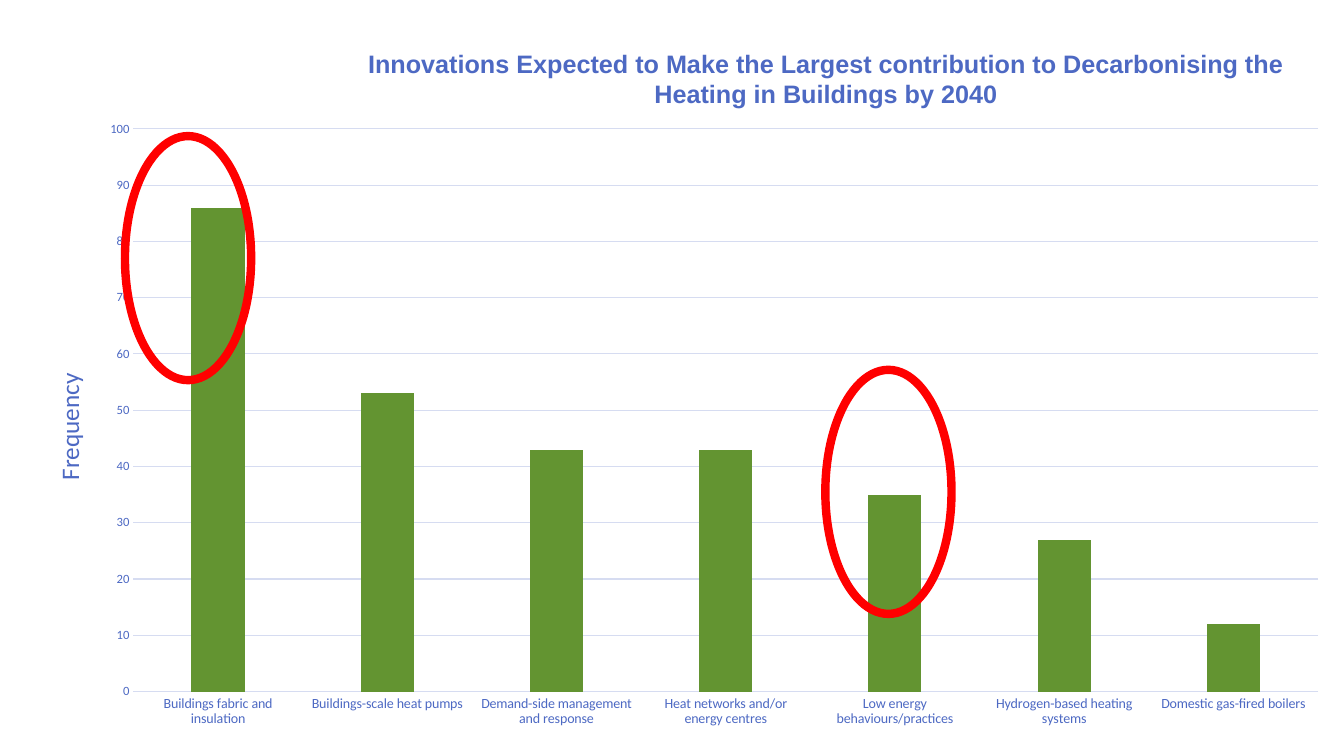
from lxml.etree import SubElement
from pptx import Presentation
from pptx.chart.data import CategoryChartData
from pptx.dml.color import RGBColor
from pptx.enum.chart import XL_CHART_TYPE, XL_TICK_MARK
from pptx.enum.shapes import MSO_SHAPE
from pptx.enum.text import PP_ALIGN
from pptx.oxml.ns import qn
from pptx.util import Cm, Pt

BLUE = "4D69C3"
PALE_BLUE = "D6DCF1"
GREEN = "639431"
RED = "FF0000"

FREQUENCIES = {
    "Buildings fabric and insulation": 86,
    "Buildings-scale heat pumps": 53,
    "Demand-side management and response": 43,
    "Heat networks and/or energy centres": 43,
    "Low energy behaviours/practices": 35,
    "Hydrogen-based heating systems": 27,
    "Domestic gas-fired boilers": 12,
}


def color(hex_code):
    return RGBColor.from_string(hex_code)


def style_font(font, size, hex_code=BLUE, name="Calibri", bold=False):
    font.size = Pt(size)
    font.name = name
    font.bold = bold
    font.color.rgb = color(hex_code)


def style_line(line, hex_code, width):
    line.color.rgb = color(hex_code)
    line.width = Pt(width)


def write_text(frame, text, align=PP_ALIGN.CENTER, **font_format):
    paragraph = frame.paragraphs[0]
    paragraph.alignment = align
    run = paragraph.add_run()
    run.text = text
    style_font(run.font, **font_format)


def set_layout(parent, position, **settings):
    layout = parent.find(qn("c:layout"))
    if layout is None:
        layout = SubElement(parent, qn("c:layout"))
        parent.insert(position, layout)
    manual = SubElement(layout, qn("c:manualLayout"))
    for key, value in settings.items():
        SubElement(manual, qn(f"c:{key}")).set("val", str(value))


def add_heading(slide, text):
    heading = slide.shapes.add_textbox(Cm(8.56), Cm(1.09), Cm(24.51), Cm(1.8))
    heading.text_frame.word_wrap = True
    write_text(heading.text_frame, text, size=18, name="Arial", bold=True)


def style_category_axis(axis):
    axis.major_tick_mark = XL_TICK_MARK.NONE
    style_font(axis.tick_labels.font, 10)
    style_line(axis.format.line, PALE_BLUE, 0.75)


def style_value_axis(axis, title):
    axis.minimum_scale, axis.maximum_scale, axis.major_unit = 0, 100, 10
    axis.major_tick_mark = XL_TICK_MARK.NONE
    style_font(axis.tick_labels.font, 9)
    axis.format.line.fill.background()
    style_line(axis.major_gridlines.format.line, PALE_BLUE, 0.75)
    write_text(axis.axis_title.text_frame, title, size=18)
    set_layout(axis.axis_title.element, 1, xMode="edge", yMode="edge", x=0.02, y=0.41)


def add_frequency_chart(slide):
    data = CategoryChartData()
    data.categories = FREQUENCIES.keys()
    data.add_series("Series 1", FREQUENCIES.values())
    chart = slide.shapes.add_chart(
        XL_CHART_TYPE.COLUMN_CLUSTERED, Cm(0.53), Cm(2.77), Cm(33.32), Cm(15.9), data
    ).chart
    chart.has_legend = False
    chart.has_title = False
    style_font(chart.font, 10, "24356B")
    columns = chart.plots[0]
    columns.gap_width = 219
    columns.overlap = -27
    columns.vary_by_categories = False
    fill = columns.series[0].format.fill
    fill.solid()
    fill.fore_color.rgb = color(GREEN)
    style_category_axis(chart.category_axis)
    style_value_axis(chart.value_axis, "Frequency")
    plot_area = chart.element.find(".//" + qn("c:plotArea"))
    set_layout(plot_area, 0, layoutTarget="inner", xMode="edge", yMode="edge",
               x=0.085, y=0.03, w=0.896, h=0.892)


def add_highlight(slide, left, top):
    ring = slide.shapes.add_shape(MSO_SHAPE.OVAL, Cm(left), Cm(top), Cm(3.18), Cm(6.15))
    ring.shadow.inherit = False
    ring.fill.background()
    style_line(ring.line, RED, 6)


def main():
    presentation = Presentation()
    presentation.slide_width = Cm(33.87)
    presentation.slide_height = Cm(19.05)
    slide = presentation.slides.add_slide(presentation.slide_layouts[6])
    add_frequency_chart(slide)
    add_heading(slide, "Innovations Expected to Make the Largest contribution to "
                       "Decarbonising the Heating in Buildings by 2040")
    for left, top in ((3.15, 3.43), (20.8, 9.32)):
        add_highlight(slide, left, top)
    presentation.save("out.pptx")


if __name__ == "__main__":
    main()
